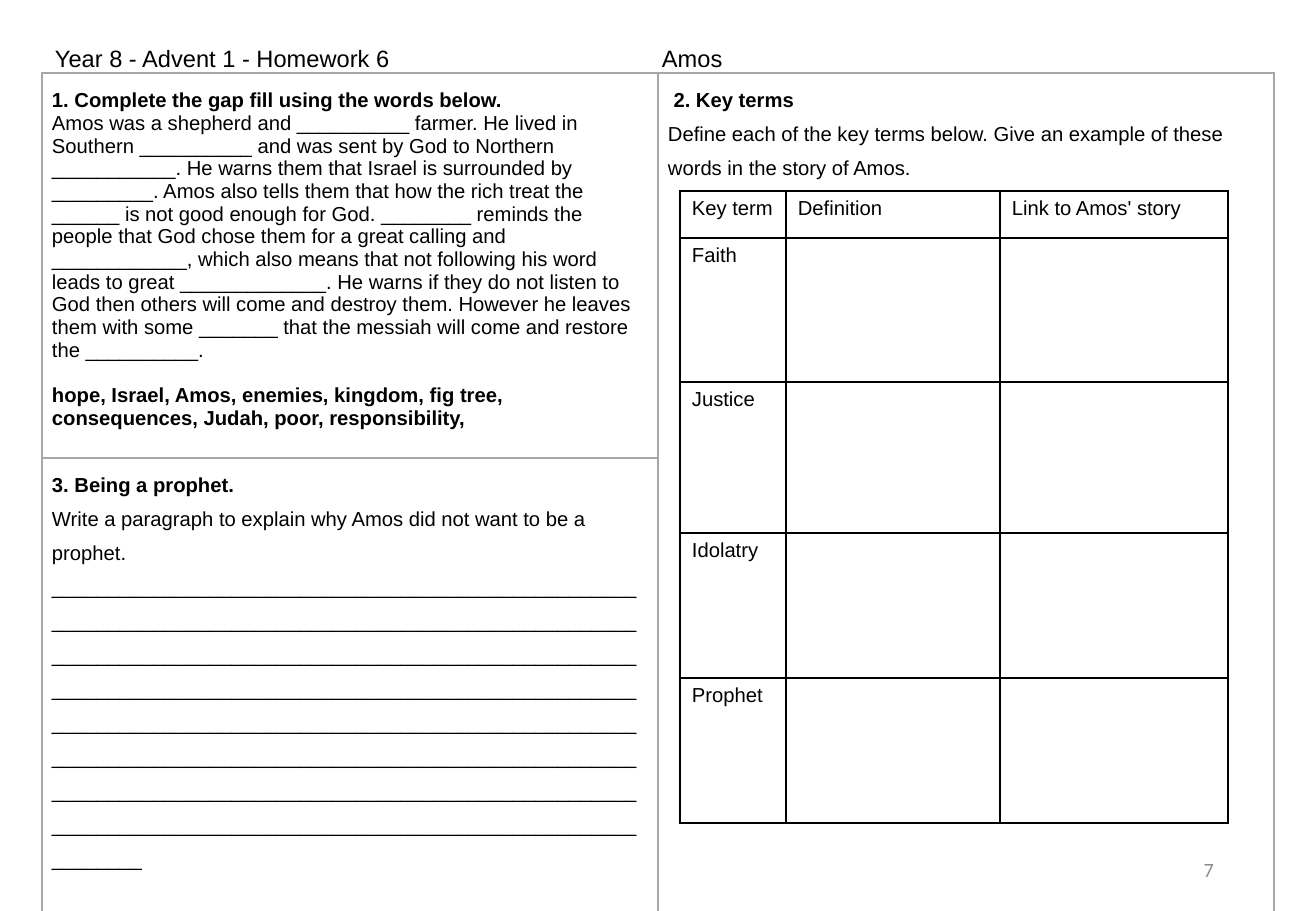
from lxml.etree import SubElement
from pptx import Presentation
from pptx.dml.color import RGBColor
from pptx.enum.shapes import MSO_SHAPE
from pptx.enum.text import MSO_ANCHOR, PP_ALIGN
from pptx.oxml.ns import qn
from pptx.util import Pt

SCALE = 7526  # EMU in one px
BLACK, WHITE, GREY, PALE = "000000", "FFFFFF", "8C8C8C", "A6A6A6"

GAPS = (
    "Amos was a shepherd and __________ farmer. He lived in Southern "
    "__________ and was sent by God to Northern ___________. He warns them "
    "that Israel is surrounded by _________. Amos also tells them that how "
    "the rich treat the ______ is not good enough for God. ________ reminds "
    "the people that God chose them for a great calling and ____________, "
    "which also means that not following his word leads to great "
    "_____________. He warns if they do not listen to God then others will "
    "come and destroy them. However he leaves them with some _______ that "
    "the messiah will come and restore the __________."
)
WORDS = ("hope, Israel, Amos, enemies, kingdom, fig tree, consequences, "
         "Judah, poor, responsibility,")
DEFINE = ("Define each of the key terms below. Give an example of these "
          "words in the story of Amos.")
EXPLAIN = "Write a paragraph to explain why Amos did not want to be a prophet."
HEADS = ["Key term", "Definition", "Link to Amos' story"]
TERMS = ["Faith", "Justice", "Idolatry", "Prophet"]


def px(count):
    return round(count * SCALE)


def paint(code):
    return RGBColor.from_string(code)


def write(para, text, size=12, bold=False, font="Arial", color=BLACK):
    run = para.add_run()
    run.text = text
    run.font.size = Pt(size)
    run.font.bold = bold
    run.font.name = font
    run.font.color.rgb = paint(color)


def fill_text(frame, lines):
    """Write (text, bold, line spacing, points before) paragraphs."""
    for i, (text, bold, lead, gap) in enumerate(lines):
        para = frame.add_paragraph() if i else frame.paragraphs[0]
        para.line_spacing = lead
        para.space_before = Pt(gap)
        write(para, text, bold=bold)


def edge(cell, color):
    """Draw a 1 pt border on all four sides."""
    props = cell._tc.get_or_add_tcPr()
    for i, side in enumerate(("lnL", "lnR", "lnT", "lnB")):
        line = props.makeelement(qn(f"a:{side}"), {"w": str(Pt(1))})
        fill = SubElement(line, qn("a:solidFill"))
        SubElement(fill, qn("a:srgbClr"), val=color)
        props.insert(i, line)


def add_grid(slide, left, top, cols, rows, color, pad):
    """Add a plain ruled table; pad is the side and top inset."""
    table = slide.shapes.add_table(
        len(rows), len(cols), px(left), px(top),
        px(sum(cols)), px(sum(rows))).table
    table.first_row = table.horz_banding = False
    for col, width in zip(table.columns, cols):
        col.width = px(width)
    for row, height in zip(table.rows, rows):
        row.height = px(height)
    for cell in table.iter_cells():
        cell.fill.background()
        cell.margin_left = cell.margin_right = px(pad[0])
        cell.margin_top = cell.margin_bottom = px(pad[1])
        edge(cell, color)
    return table


def add_head(slide, left, top, width, height):
    box = slide.shapes.add_shape(
        MSO_SHAPE.RECTANGLE, px(left), px(top), px(width), px(height))
    box.shadow.inherit = False
    box.fill.solid()
    box.fill.fore_color.rgb = paint(WHITE)
    box.line.fill.background()
    frame = box.text_frame
    frame.vertical_anchor = MSO_ANCHOR.TOP
    para = frame.paragraphs[0]
    para.alignment = PP_ALIGN.LEFT
    para.line_spacing = 1.5
    tabs = SubElement(para._p.get_or_add_pPr(), qn("a:tabLst"))
    SubElement(tabs, qn("a:tab"), pos=str(px(607)), algn="l")
    write(para, "Year 8 - Advent 1 - Homework 6\tAmos", 14)


def add_tasks(slide, left, top, width, rows):
    table = add_grid(slide, left, top, [width // 2] * 2, rows, PALE, (10, 5))
    table.cell(0, 1).merge(table.cell(1, 1))
    fill_text(table.cell(0, 0).text_frame, [
        ("1. Complete the gap fill using the words below.", True, 1.5, 0),
        (GAPS, False, 1.0, 0),
        (WORDS, True, 1.0, 13.4),
    ])
    fill_text(table.cell(0, 1).text_frame, [
        (" 2. Key terms", True, 1.5, 0),
        (DEFINE, False, 1.5, 0),
    ])
    fill_text(table.cell(1, 0).text_frame, [
        ("3. Being a prophet.", True, 1.5, 0),
        (EXPLAIN, False, 1.5, 0),
        ("_" * 424, False, 1.5, 0),
    ])


def add_terms(slide, left, top, cols, rows):
    table = add_grid(slide, left, top, cols, rows, BLACK, (12, 6))
    for i, text in enumerate(HEADS):
        write(table.cell(0, i).text_frame.paragraphs[0], text)
    for i, text in enumerate(TERMS, 1):
        write(table.cell(i, 0).text_frame.paragraphs[0], text)


def add_folio(slide, left, top, width, height):
    """Add the page number."""
    box = slide.shapes.add_textbox(px(left), px(top), px(width), px(height))
    frame = box.text_frame
    frame.word_wrap = True
    frame.vertical_anchor = MSO_ANCHOR.MIDDLE
    para = frame.paragraphs[0]
    para.alignment = PP_ALIGN.RIGHT
    write(para, "7", font="Calibri", color=GREY)


def main():
    deck = Presentation()
    deck.slide_width, deck.slide_height = px(1316), px(911)
    slide = deck.slides.add_slide(deck.slide_layouts[6])
    add_folio(slide, 930, 845, 296, 49)
    add_head(slide, 43, 24, 1259, 91)
    add_tasks(slide, 42, 73, 1232, [361, 486])
    add_terms(slide, 680, 191, [106, 214, 228], [47, 144, 151, 145, 145])
    deck.save("out.pptx")


if __name__ == "__main__":
    main()
